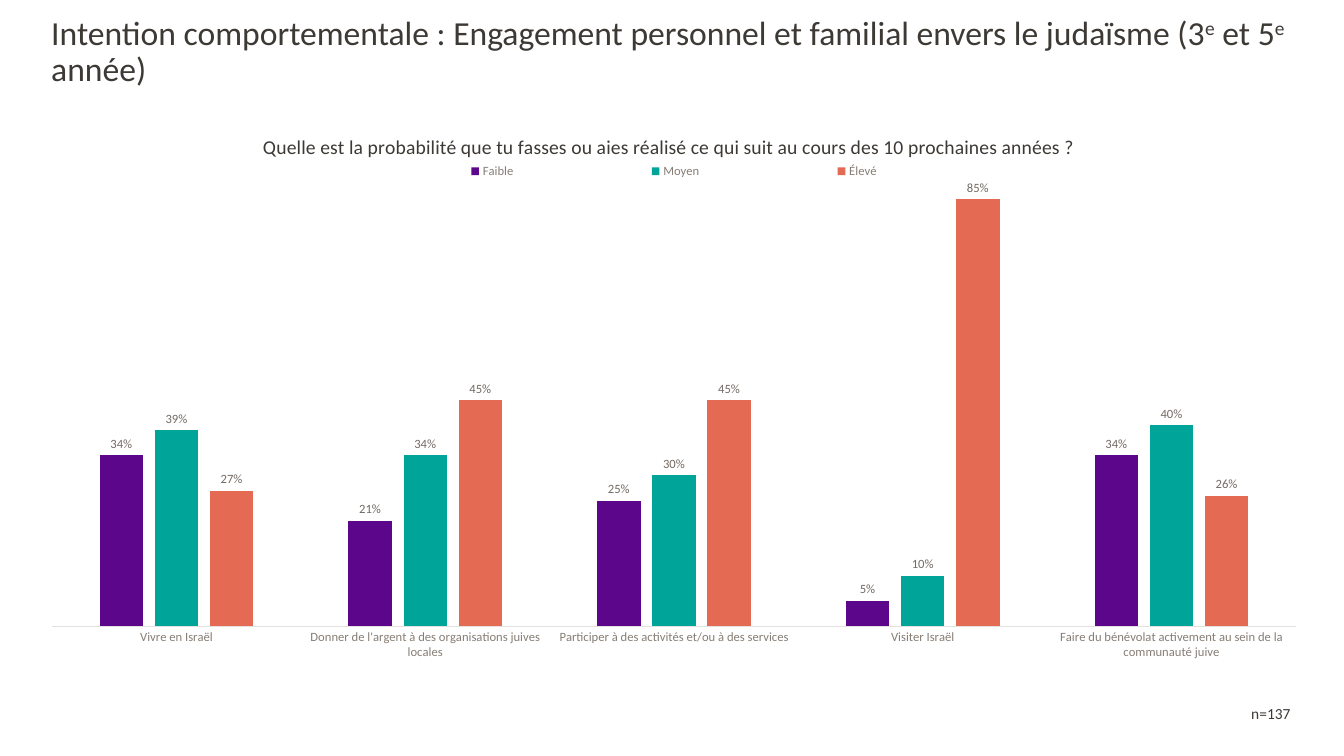
import pptx
import pptx.chart.data
import pptx.dml.color
import pptx.enum.chart
import pptx.enum.text
import pptx.oxml
import pptx.oxml.ns
import pptx.util

Inches = pptx.util.Inches
Pt = pptx.util.Pt
qn = pptx.oxml.ns.qn
DARK, GREY, LABEL, RULE = "3D3935", "877E75", "726A63", "E3E1DF"


def color(code):
    return pptx.dml.color.RGBColor.from_string(code)


class Deck:
    """Holds the font and the current slide, and draws each kind of element."""

    def __init__(self, face):
        self.face = face
        self.file = pptx.Presentation()
        self.file.slide_width = Inches(13.33)
        self.file.slide_height = Inches(7.5)
        self.slide = self.file.slides.add_slide(self.file.slide_layouts[6])

    def style(self, font, size, code):
        font.name = self.face
        font.size = Pt(size)
        font.bold = False
        font.color.rgb = color(code)

    def text(self, box, parts, size, align, anchor, space=1.0):
        shape = self.slide.shapes.add_textbox(*map(Inches, box))
        frame = shape.text_frame
        frame.word_wrap = True
        frame.vertical_anchor = anchor
        para = frame.paragraphs[0]
        para.alignment = align
        para.line_spacing = space
        for words, raised in parts:
            run = para.add_run()
            run.text = words
            self.style(run.font, size, DARK)
            if raised:
                run._r.get_or_add_rPr().set("baseline", "30000")

    def place(self, parent, prior, inner=False, **spots):
        for old in parent.findall(qn("c:layout")):
            parent.remove(old)
        modes = "".join(f'<c:{key}Mode val="edge"/>' for key in "xy")
        sizes = "".join(f'<c:{key} val="{val}"/>' for key, val in spots.items())
        target = '<c:layoutTarget val="inner"/>' if inner else ""
        layout = pptx.oxml.parse_xml(
            f'<c:layout {pptx.oxml.ns.nsdecls("c")}><c:manualLayout>'
            f"{target}{modes}{sizes}</c:manualLayout></c:layout>")
        if prior:
            parent.find(qn(prior)).addnext(layout)
        else:
            parent.insert(0, layout)

    def chart(self, box, title, cats, series):
        data = pptx.chart.data.CategoryChartData(number_format="0\\%")
        data.categories = cats
        for name, _, vals in series:
            data.add_series(name, vals)
        kind = pptx.enum.chart.XL_CHART_TYPE.COLUMN_CLUSTERED
        chart = self.slide.shapes.add_chart(kind, *map(Inches, box), data).chart
        self.style(chart.font, 10, DARK)

        chart.has_title = True
        para = chart.chart_title.text_frame.paragraphs[0]
        para.text = title
        self.style(para.runs[0].font, 14, DARK)
        self.place(chart.chart_title._element, "c:tx", x=0.18, y=0.035)

        chart.has_legend = True
        legend = chart.legend
        legend.position = pptx.enum.chart.XL_LEGEND_POSITION.BOTTOM
        legend.include_in_layout = False
        self.style(legend.font, 9, GREY)
        self.place(legend._element, "c:legendPos", x=0.24, y=0.08, w=0.52, h=0.05)

        none = pptx.enum.chart.XL_TICK_MARK.NONE
        axis = chart.category_axis
        axis.major_tick_mark = axis.minor_tick_mark = none
        axis.format.line.color.rgb = color(RULE)
        axis.format.line.width = Pt(0.75)
        self.style(axis.tick_labels.font, 9, GREY)
        scale = chart.value_axis
        scale.minimum_scale, scale.maximum_scale = 0, 90
        scale.has_major_gridlines = False
        scale.visible = False

        plot = chart.plots[0]
        plot.gap_width, plot.overlap = 219, -27
        plot.vary_by_categories = False
        for bars, (_, code, _) in zip(plot.series, series):
            bars.format.fill.solid()
            bars.format.fill.fore_color.rgb = color(code)
            labels = bars.data_labels
            labels.show_value = True
            labels.number_format = "0\\%"
            labels.number_format_is_linked = False
            labels.position = pptx.enum.chart.XL_LABEL_POSITION.OUTSIDE_END
            self.style(labels.font, 9, LABEL)
        area = chart._chartSpace.find(qn("c:chart")).find(qn("c:plotArea"))
        self.place(area, None, True, x=0.02, y=0.11, w=0.96, h=0.76)


def main():
    deck = Deck("Calibri")
    align = pptx.enum.text.PP_ALIGN
    anchor = pptx.enum.text.MSO_ANCHOR
    head = [
        ("Intention comportementale : Engagement personnel et familial envers le judaïsme (3", False),
        ("e", True), (" et 5", False), ("e", True), (" année)", False),
    ]
    deck.text((0.41, 0.06, 12.92, 0.92), head, 24, align.LEFT, anchor.MIDDLE, 0.9)
    deck.text((12.1, 6.94, 1.01, 0.29), [("n=137", False)], 11, align.CENTER, anchor.TOP)
    deck.chart(
        (0.26, 1.08, 12.85, 5.9),
        "Quelle est la probabilité que tu fasses ou aies réalisé ce qui suit au cours des 10 prochaines années ?",
        ["Vivre en Israël",
         "Donner de l'argent à des organisations juives locales",
         "Participer à des activités et/ou à des services",
         "Visiter Israël",
         "Faire du bénévolat activement au sein de la communauté juive"],
        [("Faible", "5C068C", (34, 21, 25, 5, 34)),
         ("Moyen", "00A499", (39, 34, 30, 10, 40)),
         ("Élevé", "E56A54", (27, 45, 45, 85, 26))],
    )
    deck.file.save("out.pptx")


if __name__ == "__main__":
    main()
